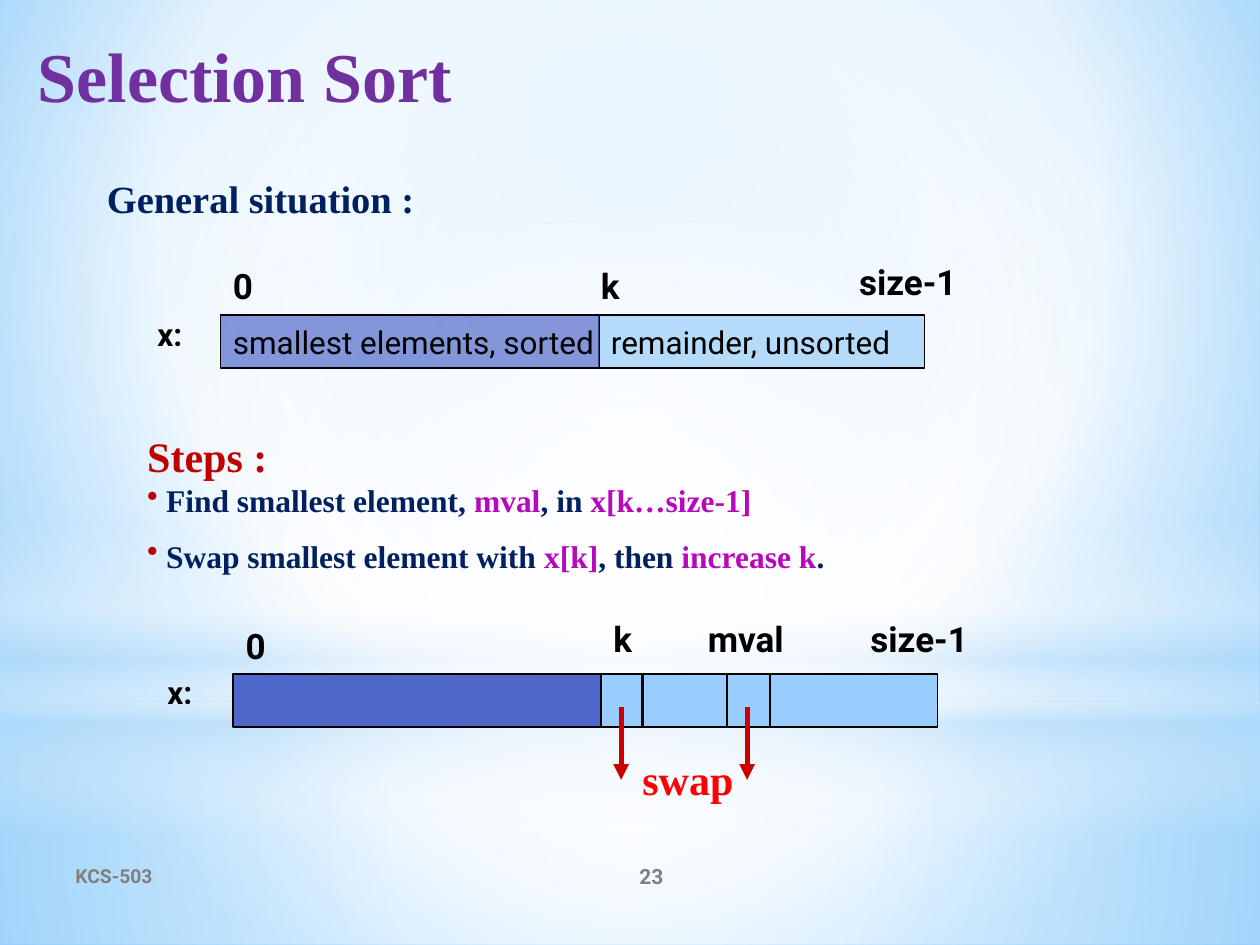
"""Build the Selection Sort slide with its two array diagrams."""
from lxml.etree import SubElement
from pptx import Presentation
from pptx.dml.color import RGBColor as RGB
from pptx.enum.shapes import MSO_CONNECTOR as LINE, MSO_SHAPE as SHAPE
from pptx.enum.text import MSO_ANCHOR as ANCHOR, PP_ALIGN as ALIGN
from pptx.oxml.ns import qn
from pptx.util import Pt

PX = 9144
SERIF, SANS = "Times New Roman", "Roboto"
COLORS = {
    "black": "000000", "white": "FFFFFF", "purple": "7030A0", "gray": "808080",
    "navy": "002060", "crimson": "C00000", "magenta": "B808BC", "red": "FF0000",
    "arrow": "CC0000", "indigo": "4E67C8", "sky": "B4DCFA", "blue": "99CCFF",
    "glow": "9ED5FF", "deep": "5BB9FF",
}


def write(paragraph, text, size=20, color="black", font=SANS, bold=True, align=ALIGN.LEFT):
    paragraph.alignment = align
    run = paragraph.add_run()
    run.text = text
    run.font.size, run.font.name, run.font.bold = Pt(size), font, bold
    run.font.color.rgb = RGB.from_string(COLORS[color])


def set_gradient(element, stops, center=None):
    solid = element.find(".//" + qn("a:solidFill"))
    gradient = solid.makeelement(qn("a:gradFill"), {"rotWithShape": "1"})
    solid.getparent().replace(solid, gradient)
    stop_list = SubElement(gradient, qn("a:gsLst"))
    for position, color, alpha in stops:
        stop = SubElement(stop_list, qn("a:gs"), pos=str(position * 1000))
        tone = SubElement(stop, qn("a:srgbClr"), val=COLORS[color])
        SubElement(tone, qn("a:alpha"), val=str(alpha * 1000))
    if center:
        path = SubElement(gradient, qn("a:path"), path="circle")
        SubElement(path, qn("a:fillToRect"), {side: str(p * 1000) for side, p in zip("ltrb", center)})
    else:
        SubElement(gradient, qn("a:lin"), ang="5400000", scaled="0")


prs = Presentation()
prs.slide_width, prs.slide_height = 1000 * PX, 750 * PX
slide = prs.slides.add_slide(prs.slide_layouts[5])
shapes = slide.shapes

slide.background.fill.solid()
slide.background.fill.fore_color.rgb = RGB.from_string(COLORS["glow"])
set_gradient(slide.element, [(0, "glow", 100), (60, "white", 100), (100, "deep", 100)], (20, 10, 20, 60))

middle = (50, 50, 50, 50)
backdrop = [
    (SHAPE.RECTANGLE, 558, 192, [(0, "white", 91), (37, "white", 76), (100, "sky", 79)], middle),
    (SHAPE.RECTANGLE, 0, 558, [(0, "white", 89), (48, "white", 62), (100, "sky", 79)], middle),
    (SHAPE.RECTANGLE, 412, 250, [(0, "white", 0), (29, "white", 30), (45, "sky", 40),
                                 (55, "white", 26), (65, "sky", 60), (100, "white", 0)], None),
    (SHAPE.OVAL, 175, 558, [(0, "white", 100), (56, "white", 0)], middle),
]
for outline, top, height, stops, center in backdrop:
    layer = shapes.add_shape(outline, 0, top * PX, 1000 * PX, height * PX)
    layer.shadow.inherit = False
    layer.line.fill.background()
    layer.fill.solid()
    layer.fill.fore_color.rgb = RGB.from_string(COLORS["white"])
    set_gradient(layer.element, stops, center)

title = shapes.title
title.left, title.top, title.width, title.height = 20 * PX, 21 * PX, 953 * PX, 102 * PX
title.text_frame.vertical_anchor = ANCHOR.TOP
write(title.text_frame.paragraphs[0], "Selection Sort", size=40, color="purple", font=SERIF)
shapes._spTree.append(title.element)

segments = [
    (475, 250, 259, "sky", 100, "remainder, unsorted"),
    (175, 250, 301, "indigo", 68, "smallest elements, sorted"),
    (185, 535, 292, "indigo", 100, ""),
    (477, 535, 267, "blue", 100, ""),
]
for left, top, width, color, alpha, caption in segments:
    segment = shapes.add_shape(SHAPE.RECTANGLE, left * PX, top * PX, width * PX, 42 * PX)
    segment.shadow.inherit = False
    segment.fill.solid()
    segment.fill.fore_color.rgb = RGB.from_string(COLORS[color])
    if alpha < 100:
        tone = segment.element.spPr.find(".//" + qn("a:srgbClr"))
        SubElement(tone, qn("a:alpha"), val=str(alpha * 1000))
    segment.line.color.rgb = RGB.from_string(COLORS["black"])
    segment.line.width = Pt(0.75)
    if caption:
        segment.text_frame.word_wrap = False
        segment.text_frame.vertical_anchor = ANCHOR.MIDDLE
        write(segment.text_frame.paragraphs[0], caption, size=18, bold=False)

footer = {"color": "gray"}
labels = [
    ("KCS-503", 50, 675, 367, 40, ANCHOR.MIDDLE, {"size": 11, **footer}),
    ("23", 417, 675, 200, 40, ANCHOR.MIDDLE, {"size": 12, "align": ALIGN.CENTER, **footer}),
    ("General situation :", 75, 134, 845, 72, ANCHOR.TOP, {"size": 22, "color": "navy", "font": SERIF}),
    ("0", 175, 205, 38, 43, ANCHOR.TOP, {}),
    ("k", 467, 205, 37, 43, ANCHOR.TOP, {}),
    ("size-1", 672, 202, 104, 43, ANCHOR.TOP, {}),
    ("x:", 115, 245, 52, 50, ANCHOR.TOP, {"size": 18}),
    ("0", 185, 491, 38, 43, ANCHOR.TOP, {}),
    ("k", 477, 485, 37, 43, ANCHOR.TOP, {}),
    ("mval", 552, 485, 90, 43, ANCHOR.TOP, {}),
    ("size-1", 681, 485, 110, 43, ANCHOR.TOP, {}),
    ("x:", 123, 529, 52, 50, ANCHOR.TOP, {"size": 18}),
    ("swap", 500, 593, 93, 50, ANCHOR.TOP, {"size": 24, "color": "red", "font": SERIF}),
]
for text, left, top, width, height, anchor, style in labels:
    label = shapes.add_textbox(left * PX, top * PX, width * PX, height * PX).text_frame
    label.word_wrap = width > 60
    label.vertical_anchor = anchor
    write(label.paragraphs[0], text, **style)

steps = shapes.add_textbox(107 * PX, 337 * PX, 795 * PX, 125 * PX).text_frame
steps.word_wrap = True
write(steps.paragraphs[0], "Steps :", size=24, color="crimson", font=SERIF)
actions = [
    (0, [("Find smallest element, ", "navy"), ("mval", "magenta"), (", in ", "navy"),
         ("x[k…size-1]", "magenta")]),
    (10, [("Swap smallest element with ", "navy"), ("x[k]", "magenta"), (", then ", "navy"),
          ("increase k", "magenta"), (".", "navy")]),
]
for gap, phrases in actions:
    action = steps.add_paragraph()
    action.level = 1
    action.space_before = Pt(gap)
    for text, color in phrases:
        write(action, text, size=18, color=color, font=SERIF)
    props = action._p.get_or_add_pPr()
    props.set("marL", str(15 * PX))
    props.set("indent", str(-15 * PX))
    SubElement(SubElement(props, qn("a:buClr")), qn("a:srgbClr"), val=COLORS["crimson"])
    SubElement(props, qn("a:buChar"), char="•")

dividers = [(x, 535, 577, "black", 1.5) for x in (510, 577, 611)]
arrows = [(x, 561, 619, "arrow", 3) for x in (493, 593)]
for x, top, bottom, color, weight in dividers + arrows:
    stroke = shapes.add_connector(LINE.STRAIGHT, x * PX, top * PX, x * PX, bottom * PX)
    stroke.line.color.rgb = RGB.from_string(COLORS[color])
    stroke.line.width = Pt(weight)
    if color == "arrow":
        SubElement(stroke.line._get_or_add_ln(), qn("a:tailEnd"), type="triangle")
    SubElement(stroke.element.spPr, qn("a:effectLst"))

prs.save("out.pptx")
